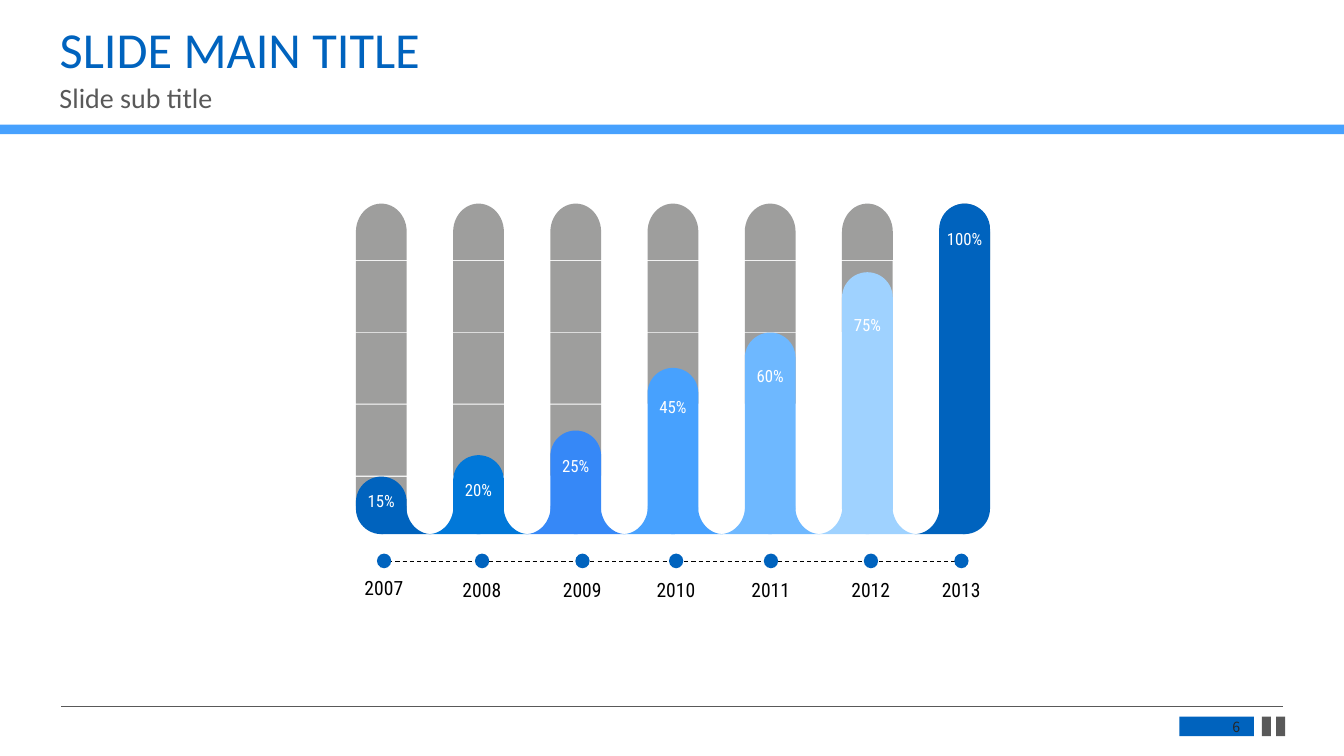
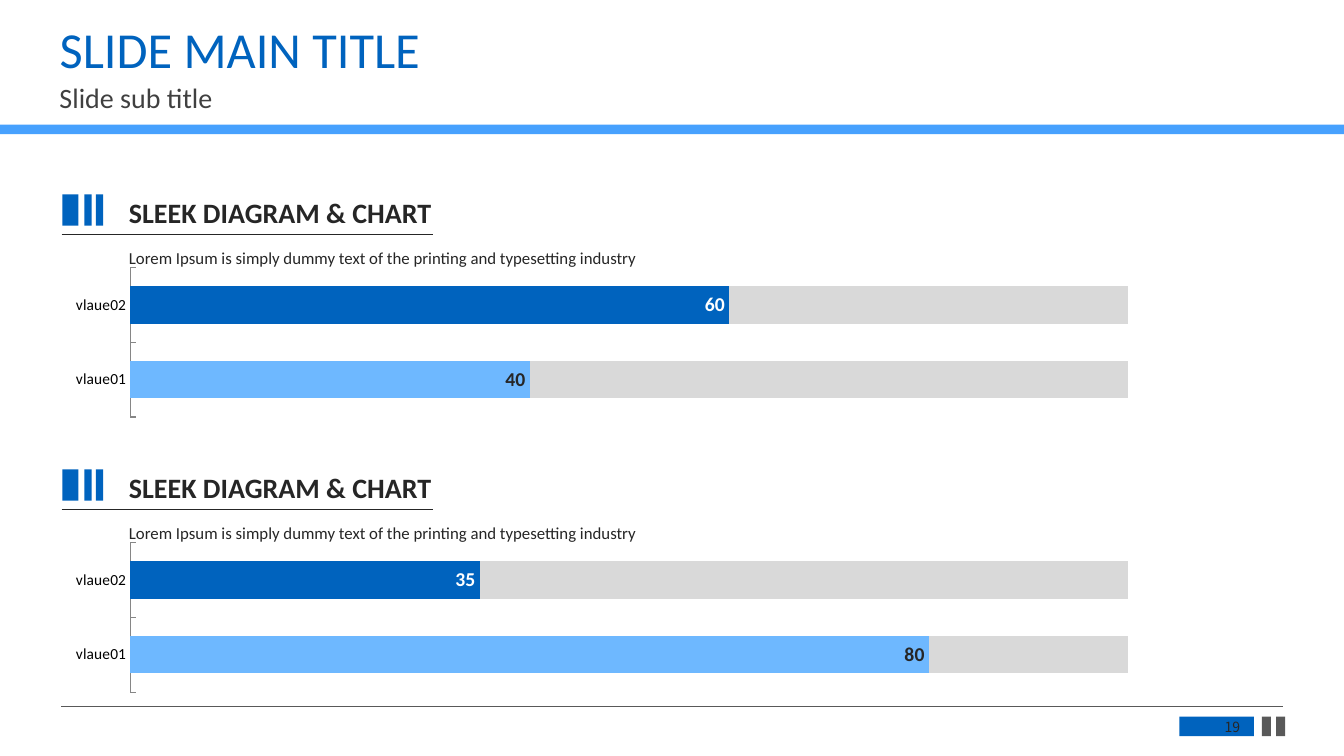
import math

import lxml.etree
import pptx
import pptx.chart.data
import pptx.dml.color
import pptx.enum.chart
import pptx.enum.dml
import pptx.enum.shapes
import pptx.enum.text
import pptx.oxml
import pptx.oxml.ns
import pptx.util

Cm = pptx.util.Cm
Pt = pptx.util.Pt
RGB = pptx.dml.color.RGBColor
qn = pptx.oxml.ns.qn
KIND = pptx.enum.shapes.MSO_SHAPE
ALIGN = pptx.enum.text.PP_ALIGN
ANCHOR = pptx.enum.text.MSO_ANCHOR
CHART = pptx.enum.chart

BLUE = RGB(0x00, 0x63, 0xBE)
AZURE = RGB(0x01, 0x78, 0xD9)
ROYAL = RGB(0x36, 0x88, 0xF7)
SKY = RGB(0x47, 0xA1, 0xFE)
LIGHT = RGB(0x6E, 0xB8, 0xFF)
PALE = RGB(0x9F, 0xD2, 0xFF)
SLATE = RGB(0x59, 0x59, 0x59)
DARK = RGB(0x40, 0x40, 0x40)
INK = RGB(0x26, 0x26, 0x26)
COAL = RGB(0x3E, 0x3E, 0x3D)
AXIS = RGB(0x86, 0x86, 0x86)
SILVER = RGB(0xD9, 0xD9, 0xD9)
BLACK = RGB(0, 0, 0)
WHITE = RGB(0xFF, 0xFF, 0xFF)

HEAD = {"name": "Calibri", "size": Pt(36), "bold": False}
SUB = {"name": "Calibri", "size": Pt(20)}
PAGE = {"name": "Noto Sans CJK SC", "size": Pt(10)}
RATE = {"name": "Roboto Condensed", "size": Pt(12)}
YEAR = {"name": "Roboto Condensed", "size": Pt(14)}
TOPIC = {"name": "Calibri", "size": Pt(20), "bold": True}
BODY = {"name": "Calibri", "size": Pt(12)}
LABEL = {"name": "Calibri", "size": Pt(14), "bold": True}
TICK = {"name": "Calibri", "size": Pt(11), "bold": False}


def draw(slide, kind, x, y, w, h, fill):
    shape = slide.shapes.add_shape(kind, Cm(x), Cm(y), Cm(w), Cm(h))
    shape.shadow.inherit = False
    shape.fill.solid()
    shape.fill.fore_color.rgb = fill
    shape.line.fill.background()
    return shape


def write(shape, place, words, look, color, align=ALIGN.LEFT, space=1.0,
          anchor=ANCHOR.TOP):
    """Move a text box or placeholder and fill it with one paragraph."""
    for side, size in zip(("left", "top", "width", "height"), place):
        setattr(shape, side, Cm(size))
    frame = shape.text_frame
    frame.word_wrap = True
    frame.auto_size = pptx.enum.text.MSO_AUTO_SIZE.NONE
    frame.vertical_anchor = anchor
    par = frame.paragraphs[0]
    par.alignment = align
    par.line_spacing = space
    run = par.add_run()
    run.text = words
    run.font.color.rgb = color
    for key, value in look.items():
        setattr(run.font, key, value)


deck = pptx.Presentation()
deck.slide_width = Cm(33.87)
deck.slide_height = Cm(19.05)
tubes, bars = [deck.slides.add_slide(deck.slide_layouts[5]) for _ in range(2)]

# Lines: slide, left, right, height, colour, weight, dash
DASH = pptx.enum.dml.MSO_LINE.DASH
tops = (4.9, 11.83)
lines = [(slide, 1.54, 32.33, 17.8, SLATE, 0.5, None) for slide in (tubes, bars)]
lines += [(bars, 1.55, 10.92, top + 1, INK, 0.5, None) for top in tops]
lines.append((tubes, 9.6, 24.31, 14.14, BLACK, 0.75, DASH))
for slide, left, right, y, color, weight, dash in lines:
    line = slide.shapes.add_connector(
        pptx.enum.shapes.MSO_CONNECTOR.STRAIGHT, Cm(left), Cm(y), Cm(right), Cm(y))
    line.line.color.rgb = color
    line.line.width = Pt(weight)
    if dash:
        line.line.dash_style = dash
    lxml.etree.SubElement(line.element.spPr, qn("a:effectLst"))

# Title, band and page tag
for slide, number, color in ((tubes, "6", SLATE), (bars, "19", DARK)):
    draw(slide, KIND.RECTANGLE, 0, 3.14, 33.87, 0.24, SKY)
    for x, w, fill in ((29.72, 1.88, BLUE), (31.8, 0.23, SLATE), (32.16, 0.23, SLATE)):
        draw(slide, KIND.RECTANGLE, x, 18.06, w, 0.49, fill)
    write(slide.shapes.title, (1.25, 0.5, 30.94, 1.62), "SLIDE MAIN TITLE",
          HEAD, BLUE, space=0.9)
    write(slide.shapes.add_textbox(0, 0, 0, 0), (1.25, 2, 30.94, 1.14),
          "Slide sub title", SUB, color, space=0.9)
    write(slide.shapes.add_textbox(0, 0, 0, 0), (29.82, 18.1, 1.68, 0.43),
          number, PAGE, INK, ALIGN.RIGHT, anchor=ANCHOR.MIDDLE)

# Tubes: rate, bar top, label top, colour, centre of the year's dot
columns = (
    ("15%", 12.01, 12.24, BLUE, 9.68),
    ("20%", 11.47, 11.96, AZURE, 12.15),
    ("25%", 10.85, 11.35, ROYAL, 14.68),
    ("45%", 9.27, 9.88, SKY, 17.04),
    ("60%", 8.38, 9.09, LIGHT, 19.43),
    ("75%", 6.86, 7.8, PALE, 21.95),
    ("100%", 5.13, 5.64, BLUE, 24.23),
)
# Grey parts: kind, width, height, middle, rotation
parts = (
    (KIND.FLOWCHART_DELAY, 1.42, 1.28, 5.84, 270),
    (KIND.RECTANGLE, 1.28, 1.79, 7.47, 0),
    (KIND.RECTANGLE, 1.28, 1.79, 9.28, 0),
    (KIND.RECTANGLE, 1.28, 1.79, 11.09, 0),
    (KIND.FLOWCHART_DELAY, 1.42, 1.28, 12.73, 90),
)
wide, base, foot = 1.28, 13.46, 12.75
last = len(columns) - 1
for i, (rate, top, high, color, dot) in enumerate(columns):
    mid = 9.61 + 2.45 * i
    for kind, w, h, y, turn in parts:
        if y - 0.9 < top:
            part = draw(tubes, kind, mid - w / 2, y - h / 2, w, h, COAL)
            part.rotation = turn
            tint = part.element.spPr.find(".//" + qn("a:srgbClr"))
            lxml.etree.SubElement(tint, qn("a:alpha"), val="50000")
    for side in (-1, 1):
        if (i, side) in ((0, -1), (last, 1)):
            continue
        curve = []
        for step in range(19):
            turn = math.radians(step * 5)
            curve.append((Cm(mid + side * (1.26 - 0.63 * math.cos(turn))),
                          Cm(foot + (base - foot) * math.sin(turn))))
        pen = tubes.shapes.build_freeform(Cm(mid), Cm(foot))
        pen.add_line_segments(curve + [(Cm(mid), Cm(base))], close=True)
        flare = pen.convert_to_shape()
        flare.shadow.inherit = False
        flare.fill.solid()
        flare.fill.fore_color.rgb = color
        flare.line.fill.background()
    bar = draw(tubes, KIND.ROUNDED_RECTANGLE, mid - wide / 2, top, wide, base - top, color)
    bar.adjustments[0] = 0.5
    write(tubes.shapes.add_textbox(0, 0, 0, 0), (mid - 1.1, high, 2.2, 0.77),
          rate, RATE, WHITE, ALIGN.CENTER)
    draw(tubes, KIND.OVAL, dot - 0.18, 13.95, 0.36, 0.37, BLUE)
    write(tubes.shapes.add_textbox(0, 0, 0, 0),
          (dot - 1.07, 14.45 if i else 14.4, 2.13, 0.86),
          str(2007 + i), YEAR, BLACK, ALIGN.CENTER)

# Bar charts
LAYOUT = (
    '<c:layout xmlns:c="http://schemas.openxmlformats.org/drawingml/2006/chart">'
    '<c:manualLayout><c:layoutTarget val="inner"/><c:xMode val="edge"/>'
    '<c:yMode val="edge"/><c:x val="0.07"/><c:y val="0.03"/>'
    '<c:w val="0.91"/><c:h val="0.95"/></c:manualLayout></c:layout>')
for top, values in zip(tops, ((40, 60), (80, 35))):
    data = pptx.chart.data.CategoryChartData()
    data.categories = ("vlaue01", "vlaue02")
    data.add_series("Series 1", values)
    data.add_series("Series 2", [100 - value for value in values])
    chart = bars.shapes.add_chart(
        CHART.XL_CHART_TYPE.BAR_STACKED_100, Cm(1.35), Cm(top + 1.73),
        Cm(27.64), Cm(3.96), data).chart
    chart.has_legend = False
    chart.has_title = False
    chart.font.color.rgb = BLACK
    for key, value in TICK.items():
        setattr(chart.font, key, value)
    area = chart.element.find(".//" + qn("c:plotArea"))
    for old in area.findall(qn("c:layout")):
        area.remove(old)
    area.insert(0, pptx.oxml.parse_xml(LAYOUT))
    chart.value_axis.visible = False
    chart.value_axis.has_major_gridlines = False
    axis = chart.category_axis
    axis.major_tick_mark = CHART.XL_TICK_MARK.INSIDE
    axis.minor_tick_mark = CHART.XL_TICK_MARK.NONE
    axis.format.line.color.rgb = AXIS
    plot = chart.plots[0]
    plot.gap_width = 100
    plot.overlap = 100
    plot.vary_by_categories = False
    for row, fill in zip(plot.series, (BLUE, SILVER)):
        row.format.fill.solid()
        row.format.fill.fore_color.rgb = fill
    first = plot.series[0]
    point = first.points[0]
    point.format.fill.solid()
    point.format.fill.fore_color.rgb = LIGHT
    first.data_labels.show_value = True
    for label, color in ((first.data_labels, WHITE), (point.data_label, INK)):
        label.position = CHART.XL_LABEL_POSITION.INSIDE_END
        label.font.color.rgb = color
        for key, value in LABEL.items():
            setattr(label.font, key, value)

    write(bars.shapes.add_textbox(0, 0, 0, 0), (3, top, 12.98, 1.04),
          "SLEEK DIAGRAM & CHART", TOPIC, INK, space=0.9)
    write(bars.shapes.add_textbox(0, 0, 0, 0), (3, top + 1.22, 15.65, 0.79),
          "Lorem Ipsum is simply dummy text of the printing and typesetting industry",
          BODY, INK)
    for x, w in ((1.57, 0.41), (2.13, 0.18), (2.42, 0.18)):
        draw(bars, KIND.RECTANGLE, x, top, w, 0.79, BLUE)

deck.save("out.pptx")
